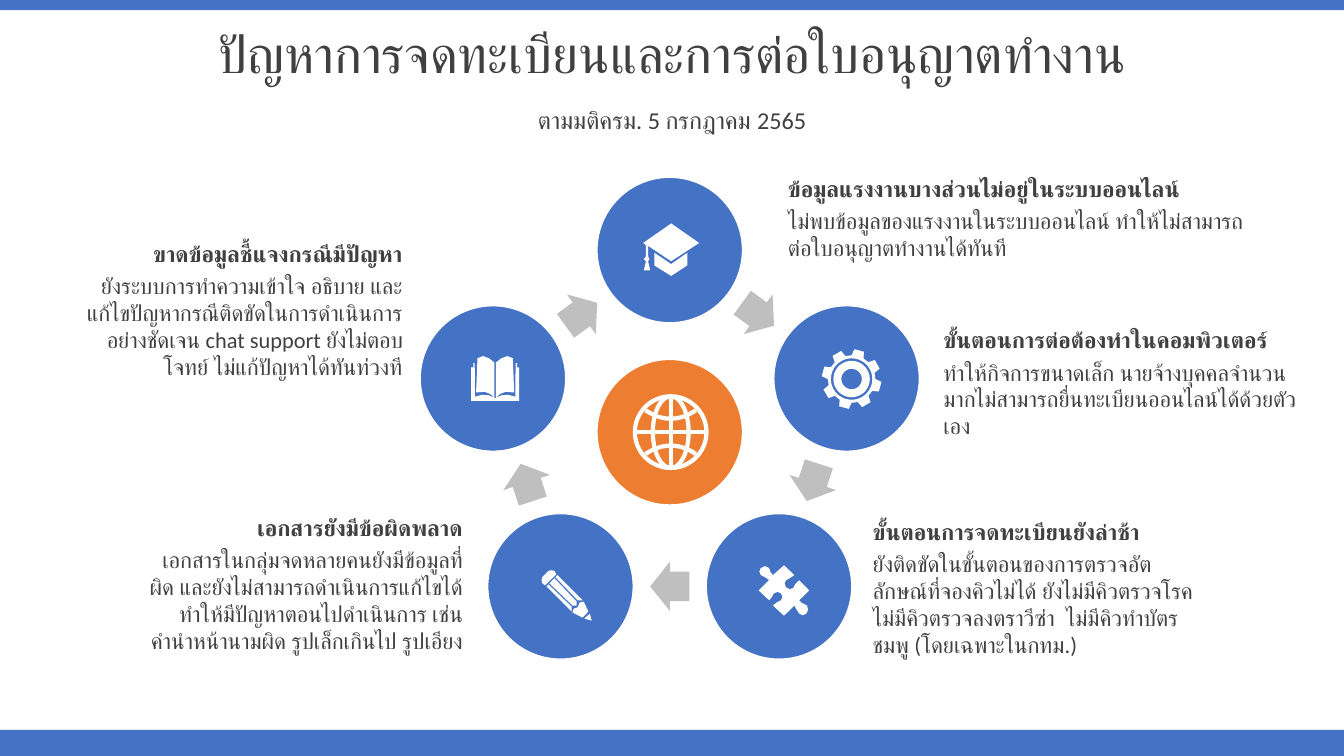
from math import cos, radians, sin

from lxml import etree
from pptx import Presentation
from pptx.dml.color import RGBColor
from pptx.enum import shapes, text
from pptx.oxml.ns import qn
from pptx.util import Pt

THEME = {
    "blue": "4472C4", "orange": "ED7D31", "grey": "BFBFBF", "white": "FFFFFF",
    "ink": "404040", "font": "Calibri", "title": 37.2, "sub": 17.3, "body": 16,
}
WIDE, HIGH = 960, 540
BARS = [(0, 7.2), (521.3, 18.7)]  # top, height
TITLES = [
    ("ปัญหาการจดทะเบียนและการต่อใบอนุญาตทำงาน", 13, 60.5, "title"),
    ("ตามมติครม. 5 กรกฎาคม 2565", 73.5, 30, "sub"),
]
# Clockwise from the top: head, body, (left, top, width, body height), right-aligned
ISSUES = [
    ("ข้อมูลแรงงานบางส่วนไม่อยู่ในระบบออนไลน์",
     "ไม่พบข้อมูลของแรงงานในระบบออนไลน์ ทำให้ไม่สามารถต่อใบอนุญาตทำงานได้ทันที",
     (555.8, 121.7, 355, 61), False),
    ("ขั้นตอนการต่อต้องทำในคอมพิวเตอร์",
     "ทำให้กิจการขนาดเล็ก นายจ้างบุคคลจำนวนมากไม่สามารถยื่นทะเบียนออนไลน์ได้ด้วยตัวเอง",
     (666.7, 229.7, 281, 89), False),
    ("ขั้นตอนการจดทะเบียนยังล่าช้า",
     "ยังติดขัดในขั้นตอนของการตรวจอัตลักษณ์ที่จองคิวไม่ได้ ยังไม่มีคิวตรวจโรค "
     "ไม่มีคิวตรวจลงตราวีซ่า  ไม่มีคิวทำบัตรชมพู (โดยเฉพาะในกทม.)",
     (616.3, 366.5, 244, 116), False),
    ("เอกสารยังมีข้อผิดพลาด",
     "เอกสารในกลุ่มจดหลายคนยังมีข้อมูลที่ผิด และยังไม่สามารถดำเนินการแก้ไขได้ "
     "ทำให้มีปัญหาตอนไปดำเนินการ เช่น คำนำหน้านามผิด รูปเล็กเกินไป รูปเอียง",
     (93.6, 363.6, 244, 143), True),
    ("ขาดข้อมูลชี้แจงกรณีมีปัญหา",
     "ยังระบบการทำความเข้าใจ อธิบาย และแก้ไขปัญหากรณีติดขัดในการดำเนินการอย่างชัดเจน "
     "chat support ยังไม่ตอบโจทย์ ไม่แก้ปัญหาได้ทันท่วงที",
     (50.4, 167.8, 244, 143), True),
]
HEAD_H, BODY_DY = 34.6, 23
CX, CY, RING, DISC = 478.4, 311.4, 132.8, 104
HUB_Y = 308.7

# Icon outlines, as offsets from the middle of their disc
CAP = [
    [(1, -19), (-19, -5), (-17, -3.5), (-17, 4.5), (-18.5, 6.5), (-17, 8),
     (-18.5, 14.5), (-14, 14.5), (-15.5, 8), (-14.5, 6.5), (-15.5, 4.5),
     (-15.5, -3), (1, 8), (21, -5)],
    [(12.5, 2), (1, 10), (-11, 2), (-11, 11), (1, 18.5), (12.5, 11)],
]
PUZZLE = [
    [(-13, -13), (-14, -10.5), (-13, -8), (-10, -6.5), (-7, -4.5), (-14.5, 3),
     (-7, 10), (-5.3, 8), (-3.6, 5), (-1, 4), (1.4, 5), (2.5, 7.5), (1.4, 10),
     (-1.5, 11.5), (-4.3, 13.7), (3.6, 21), (11, 13.7), (12.5, 16.5),
     (14.4, 19.4), (17, 20.7), (19.5, 19.5), (20.8, 17), (20, 13.7),
     (16.5, 12), (14.4, 10), (21.6, 3), (14.4, -4.3), (12, -2), (10, 1.4),
     (7.5, 2), (5, 0.7), (4, -2), (5, -4.3), (8, -6), (11, -8), (3.6, -15),
     (-4.3, -8), (-6, -10), (-7, -13), (-10, -14.4)],
]
PENCIL = [
    [(21, 19.5), (17, 23), (22.3, 24.5)],
    [(16.6, 11), (13.7, 11.5), (12.3, 15), (9.4, 16), (8.6, 18.7), (15.8, 22.3), (20, 18)],
    [(-8.6, -1.4), (-10, 0), (8, 18), (8, 14.5)],
    [(-4.3, -5.8), (-8, -2.2), (8.6, 13.7), (11.5, 13.7), (11.5, 10.8)],
    [(-2.2, -8), (-3.6, -6.5), (12.3, 10), (15.8, 10)],
    [(-6.5, -11.5), (-8.6, -11), (-13, -6.5), (-13.5, -4.5), (-13, -2.2),
     (-11, -0.7), (-3, -8.6), (-4.3, -11)],
]
HALF_BOOK = [
    [(-11, -14.5), (-7, -16), (-3, -14.5), (1, -11.5), (1, 13.7), (-2, 11), (-6, 9.5), (-12, 10)],
    [(-14, -11), (-14, -8), (-15.5, -8), (-15.5, 16), (1.6, 16), (1.6, 14),
     (-3, 12), (-8, 11.7), (-12.8, 13), (-13, -11)],
]
BOOK = HALF_BOOK + [[(3.2 - x, y) for x, y in part] for part in HALF_BOOK]


def polar(x, y, r, deg):
    return x + r * cos(radians(deg)), y + r * sin(radians(deg))


def gear(x=3.6, y=0.4):
    teeth = [polar(x, y, r, 45 * n - 75 + turn) for n in range(8)
             for r, turn in ((17, -15), (21.4, -9.5), (21.4, 9.5), (17, 15))]
    rings = [[polar(x, y, r, a) for a in range(0, 360, 10)] for r in (14.8, 13, 7.3)]
    return [teeth] + rings


ICONS = [CAP, gear(), PUZZLE, PENCIL, BOOK]

prs = Presentation()
prs.slide_width, prs.slide_height = Pt(WIDE), Pt(HIGH)
slide = prs.slides.add_slide(prs.slide_layouts[6])
art = slide.shapes


def color(name):
    return RGBColor.from_string(THEME[name])


def paint(shape, fill=None, line=None, width=1):
    shape.shadow.inherit = False
    if fill:
        shape.fill.solid()
        shape.fill.fore_color.rgb = color(fill)
    else:
        shape.fill.background()
    if line:
        shape.line.color.rgb = color(line)
        shape.line.width = Pt(width)
    else:
        shape.line.fill.background()
    return shape


def place(kind, x, y, w, h, *look):
    """Add a preset shape centred on x, y."""
    return paint(art.add_shape(kind, Pt(x - w / 2), Pt(y - h / 2), Pt(w), Pt(h)), *look)


def draw(x, y, parts, *look, close=True):
    """Add one outline made of several contours around x, y."""
    pen = None
    for part in parts:
        first, *rest = [(Pt(x + dx), Pt(y + dy)) for dx, dy in part]
        if pen is None:
            pen = art.build_freeform(*first)
        else:
            pen.move_to(*first)
        pen.add_line_segments(rest, close=close)
    paint(pen.convert_to_shape(), *look)


def write(words, x, y, w, h, size, align, bold=False):
    frame = art.add_textbox(Pt(x), Pt(y), Pt(w), Pt(h)).text_frame
    frame.word_wrap = True
    para = frame.paragraphs[0]
    para.text, para.alignment = words, align
    font = para.font
    font.name, font.size, font.bold = THEME["font"], Pt(THEME[size]), bold
    font.color.rgb = color("ink")
    return frame


def globe(x, y, r=25.6):
    for w in (2 * r, r):
        place(shapes.MSO_SHAPE.OVAL, x, y, w, 2 * r, None, "white", 3)
    for dx, dy in ((r, 0), (0, r)):
        axis = art.add_connector(shapes.MSO_CONNECTOR.STRAIGHT,
                                 Pt(x - dx), Pt(y - dy), Pt(x + dx), Pt(y + dy))
        axis.line.color.rgb, axis.line.width = color("white"), Pt(3)
        etree.SubElement(axis._element.spPr, qn("a:effectLst"))
    for side in (-1, 1):
        curve = [(dx, side * (9.6 + 6 * (dx / 18) ** 2)) for dx in range(-18, 19, 3)]
        draw(x, y, [curve], None, "white", 3, close=False)


for top, high in BARS:
    place(shapes.MSO_SHAPE.RECTANGLE, WIDE / 2, top + high / 2, WIDE, high, "blue")
for words, top, high, size in TITLES:
    frame = write(words, 0, top, WIDE, high, size, text.PP_ALIGN.CENTER)
    frame.vertical_anchor = text.MSO_ANCHOR.MIDDLE
    frame.paragraphs[0].line_spacing = 0.7
    frame.paragraphs[0].space_before = Pt(10)

for n, (head, body, (x, y, w, h), right) in enumerate(ISSUES):
    mid = polar(CX, CY, RING, 72 * n - 90)
    place(shapes.MSO_SHAPE.OVAL, *mid, DISC, DISC, "blue", "white")
    draw(*mid, ICONS[n], "white")
    gap = polar(CX, CY, RING * cos(radians(36)), 72 * n - 54)
    arrow = place(shapes.MSO_SHAPE.RIGHT_ARROW, *gap, 28, 35, "grey")
    arrow.adjustments[0], arrow.adjustments[1] = 0.6, 0.5
    arrow.rotation = (36 + 72 * n) % 360
    align = text.PP_ALIGN.RIGHT if right else text.PP_ALIGN.LEFT
    write(body, x, y + BODY_DY, w, h, "body", align)
    write(head, x, y, w, HEAD_H, "body", align, True)

place(shapes.MSO_SHAPE.OVAL, CX, HUB_Y, DISC, DISC, "orange", "white")
globe(CX + 0.7, HUB_Y)

prs.save("out.pptx")
